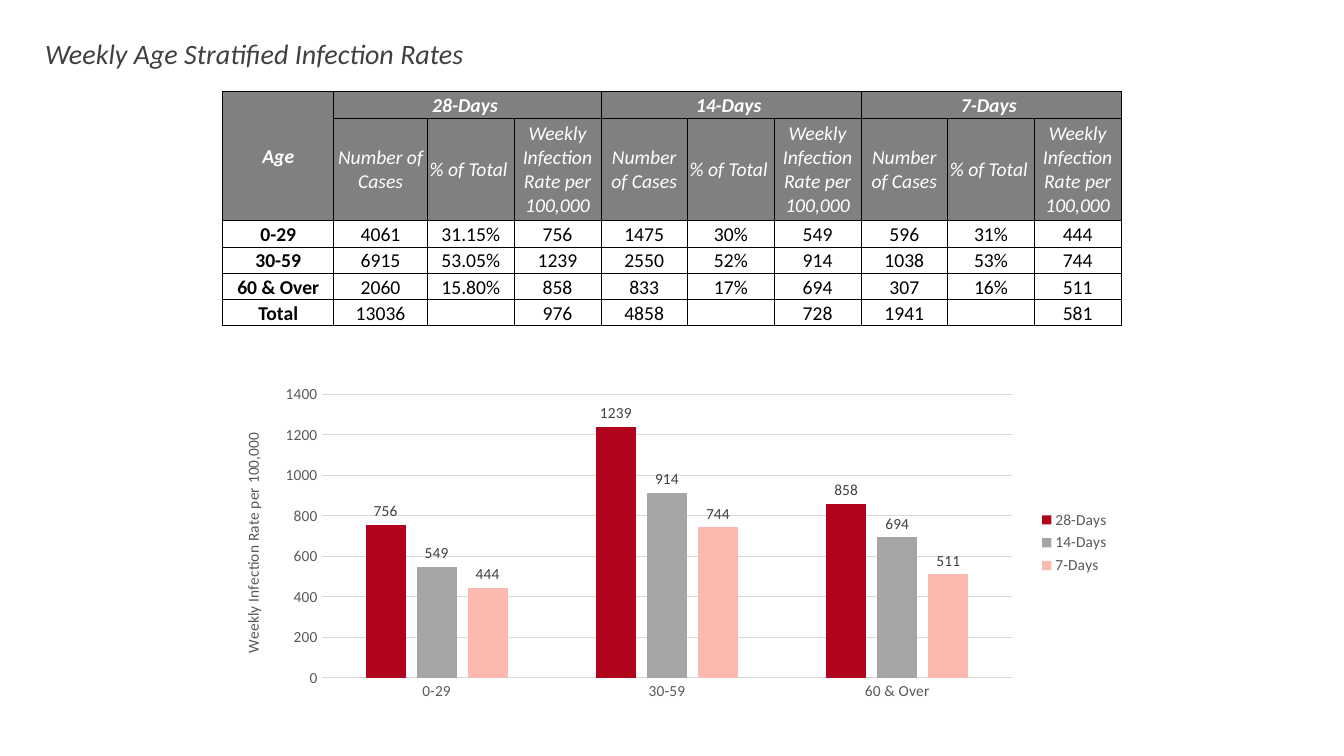
from dataclasses import dataclass

from lxml import etree
from pptx import Presentation
from pptx.chart.data import CategoryChartData
from pptx.dml.color import RGBColor
from pptx.enum.chart import XL_CHART_TYPE, XL_LABEL_POSITION, XL_LEGEND_POSITION, XL_TICK_MARK
from pptx.enum.text import MSO_ANCHOR, MSO_AUTO_SIZE, PP_ALIGN
from pptx.oxml import parse_xml
from pptx.oxml.ns import nsdecls, qn
from pptx.util import Pt

COLUMN_CLUSTERED = XL_CHART_TYPE.COLUMN_CLUSTERED
OUTSIDE_END = XL_LABEL_POSITION.OUTSIDE_END
LEGEND_RIGHT = XL_LEGEND_POSITION.RIGHT
NO_TICK = XL_TICK_MARK.NONE
MIDDLE, BOTTOM = MSO_ANCHOR.MIDDLE, MSO_ANCHOR.BOTTOM
CENTER = PP_ALIGN.CENTER
GROW = MSO_AUTO_SIZE.SHAPE_TO_FIT_TEXT

EMU_PER_PX = 9144  # 100 px to the inch
FONT = "Calibri"
COLORS = {
    "header": "808080", "header_text": "FFFFFF", "body_text": "000000",
    "dark_text": "404040", "axis_text": "595959", "grid": "D9D9D9",
}


@dataclass(frozen=True)
class Box:
    left: int
    top: int
    width: int
    height: int

    def emu(self) -> tuple[int, ...]:
        return tuple(px(v) for v in (self.left, self.top, self.width, self.height))


@dataclass(frozen=True)
class Period:
    name: str
    color: str


@dataclass(frozen=True)
class CellStyle:
    color: str
    anchor: MSO_ANCHOR
    bold: bool = False
    italic: bool = False
    fill: str | None = None


PERIODS = [Period("28-Days", "B0041D"), Period("14-Days", "A5A5A5"), Period("7-Days", "FBBAAF")]
MEASURES = ["Number of Cases", "% of Total ", "Weekly Infection Rate per 100,000"]
AGE_ROWS = [
    ["0-29", "4061", "31.15%", "756", "1475", "30%", "549", "596", "31%", "444"],
    ["30-59", "6915", "53.05%", "1239", "2550", "52%", "914", "1038", "53%", "744"],
    ["60 & Over", "2060", "15.80%", "858", "833", "17%", "694", "307", "16%", "511"],
]
TOTAL_ROW = ["Total", "13036", "", "976", "4858", "", "728", "1941", "", "581"]
SPAN = len(MEASURES)

TITLE_BOX = Box(35, 31, 593, 44)
TABLE_BOX = Box(221, 91, 890, 230)
CHART_BOX = Box(221, 375, 890, 327)
COLUMN_WIDTHS = [110, 93] + [86] * 8
ROW_HEIGHTS = [26, 102] + [26] * 4

GROUP_STYLE = CellStyle("header_text", MIDDLE, bold=True, italic=True, fill="header")
MEASURE_STYLE = CellStyle("header_text", MIDDLE, italic=True, fill="header")
AGE_STYLE = CellStyle("body_text", BOTTOM, bold=True)
VALUE_STYLE = CellStyle("body_text", BOTTOM)


def px(value: int) -> int:
    return value * EMU_PER_PX


def rgb(name: str) -> RGBColor:
    return RGBColor.from_string(COLORS[name])


def set_font(font, size: int, color: str, bold: bool = False, italic: bool = False) -> None:
    font.name, font.size = FONT, Pt(size)
    font.bold, font.italic = bold, italic
    font.color.rgb = rgb(color)


def add_title(slide) -> None:
    frame = slide.shapes.add_textbox(*TITLE_BOX.emu()).text_frame
    frame.word_wrap = True
    frame.auto_size = GROW
    paragraph = frame.paragraphs[0]
    paragraph.text = "Weekly Age Stratified Infection Rates"
    set_font(paragraph.font, 20, "dark_text", italic=True)


def style_cell(cell, text: str, style: CellStyle) -> None:
    cell.margin_left = cell.margin_right = cell.margin_top = px(1)
    cell.margin_bottom = 0
    cell.vertical_anchor = style.anchor
    # Borders come before the fill in the cell properties
    properties = cell._tc.get_or_add_tcPr()
    for side in ("lnL", "lnR", "lnT", "lnB"):
        properties.append(parse_xml(
            f'<a:{side} {nsdecls("a")} w="{Pt(0.5)}"><a:solidFill>'
            f'<a:srgbClr val="{COLORS["body_text"]}"/></a:solidFill></a:{side}>'))
    if style.fill:
        cell.fill.solid()
        cell.fill.fore_color.rgb = rgb(style.fill)
    else:
        cell.fill.background()
    paragraph = cell.text_frame.paragraphs[0]
    paragraph.alignment = CENTER
    set_font(paragraph.font, 14, style.color, style.bold, style.italic)
    if text:
        paragraph.text = text
    else:  # keeps empty cells from stretching the row
        etree.SubElement(paragraph._p, qn("a:endParaRPr"), sz="1400")


def add_rates_table(slide) -> None:
    group_row = ["Age"]
    for period in PERIODS:
        group_row += [f"{period.name} "] + [""] * (SPAN - 1)
    rows = [group_row, [""] + MEASURES * len(PERIODS), *AGE_ROWS, TOTAL_ROW]
    table = slide.shapes.add_table(len(rows), len(group_row), *TABLE_BOX.emu()).table
    table.first_row = table.horz_banding = False
    for column, width in zip(table.columns, COLUMN_WIDTHS):
        column.width = px(width)
    for row, height in zip(table.rows, ROW_HEIGHTS):
        row.height = px(height)

    # Merged headings
    table.cell(0, 0).merge(table.cell(1, 0))
    for first in range(1, len(group_row), SPAN):
        table.cell(0, first).merge(table.cell(0, first + SPAN - 1))

    for r, texts in enumerate(rows):
        for c, text in enumerate(texts):
            if r < 2:
                style = GROUP_STYLE if r == 0 or c == 0 else MEASURE_STYLE
            else:
                style = AGE_STYLE if c == 0 else VALUE_STYLE
            style_cell(table.cell(r, c), text, style)


def add_rates_chart(slide) -> None:
    data = CategoryChartData(number_format="0")
    data.categories = [row[0] for row in AGE_ROWS]
    for index, period in enumerate(PERIODS, start=1):
        data.add_series(period.name, [int(row[index * SPAN]) for row in AGE_ROWS])
    chart = slide.shapes.add_chart(COLUMN_CLUSTERED, *CHART_BOX.emu(), data).chart
    chart.has_title = False
    set_font(chart.font, 11, "body_text")

    # Columns and their labels
    plot = chart.plots[0]
    plot.gap_width, plot.overlap = 219, -27
    plot.vary_by_categories = False
    for series, period in zip(plot.series, PERIODS):
        series.format.fill.solid()
        series.format.fill.fore_color.rgb = RGBColor.from_string(period.color)
        labels = series.data_labels
        labels.show_value = True
        labels.position = OUTSIDE_END
        labels.number_format, labels.number_format_is_linked = "0", False
        set_font(labels.font, 11, "dark_text")

    # Axes
    category_axis, value_axis = chart.category_axis, chart.value_axis
    for axis in (category_axis, value_axis):
        axis.major_tick_mark = axis.minor_tick_mark = NO_TICK
        set_font(axis.tick_labels.font, 11, "axis_text")
    value_axis.minimum_scale, value_axis.maximum_scale, value_axis.major_unit = 0, 1400, 200
    value_axis.format.line.fill.background()
    for line in (category_axis.format.line, value_axis.major_gridlines.format.line):
        line.color.rgb = rgb("grid")
        line.width = Pt(0.75)
    paragraph = value_axis.axis_title.text_frame.paragraphs[0]
    paragraph.text = MEASURES[-1]
    set_font(paragraph.font, 11, "axis_text")

    # Legend
    chart.has_legend = True
    chart.legend.position = LEGEND_RIGHT
    chart.legend.include_in_layout = False
    set_font(chart.legend.font, 11, "axis_text")

    # Plot area as fractions of the chart
    plot_area = chart._chartSpace.chart.plotArea
    for old_layout in plot_area.findall(qn("c:layout")):
        plot_area.remove(old_layout)
    layout = etree.Element(qn("c:layout"))
    manual = etree.SubElement(layout, qn("c:manualLayout"))
    for tag, value in (("layoutTarget", "inner"), ("xMode", "edge"), ("yMode", "edge"),
                       ("x", "0.11"), ("y", "0.05"), ("w", "0.77"), ("h", "0.86")):
        etree.SubElement(manual, qn(f"c:{tag}"), val=value)
    plot_area.insert(0, layout)


def main() -> None:
    presentation = Presentation()
    presentation.slide_width, presentation.slide_height = px(1333), px(750)
    slide = presentation.slides.add_slide(presentation.slide_layouts[6])
    add_rates_table(slide)
    add_rates_chart(slide)
    add_title(slide)
    presentation.save("out.pptx")


if __name__ == "__main__":
    main()
